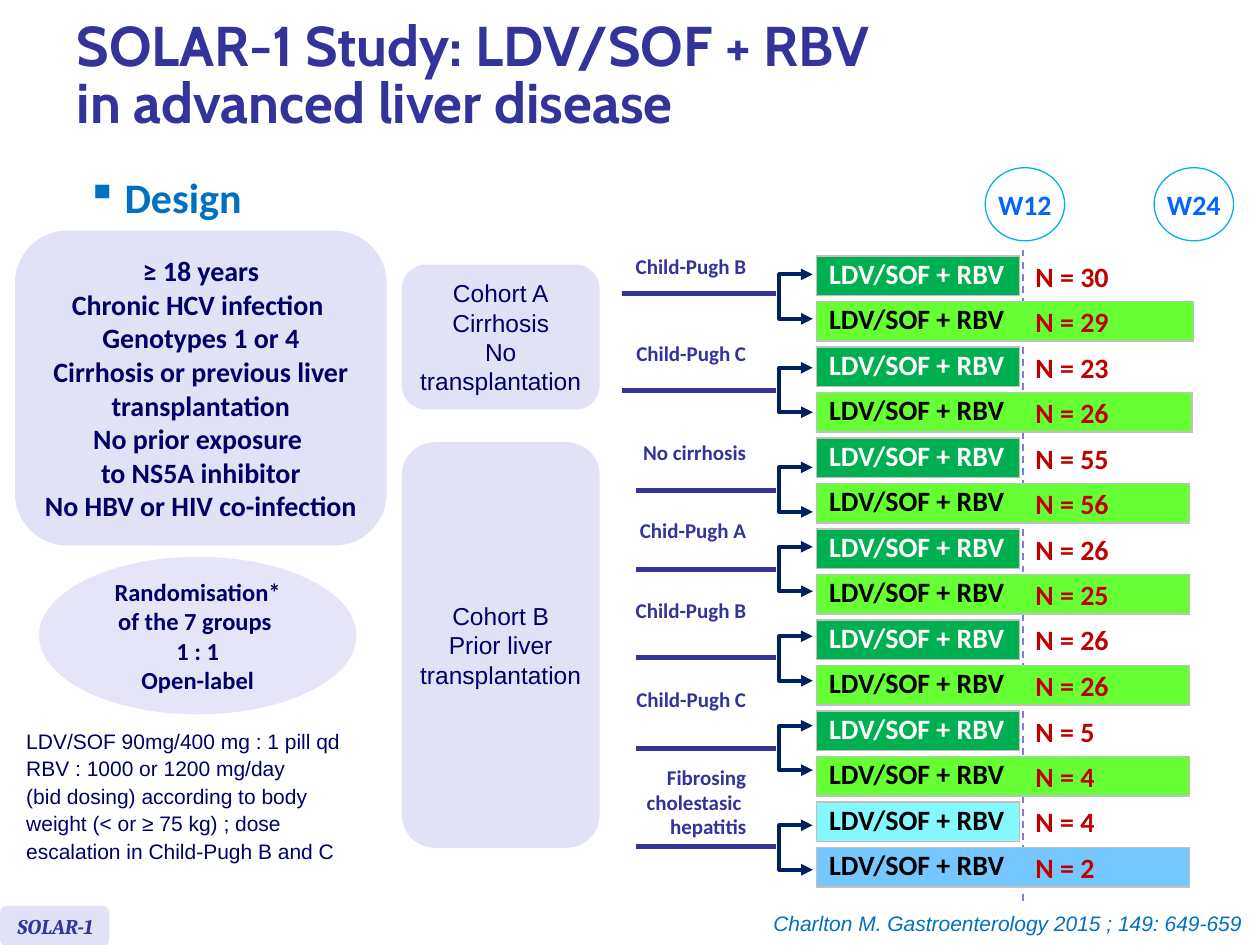
from dataclasses import dataclass

from lxml import etree
from pptx import Presentation
from pptx.dml.color import RGBColor
from pptx.enum.dml import MSO_LINE
from pptx.enum.shapes import MSO_CONNECTOR, MSO_SHAPE
from pptx.enum.text import MSO_ANCHOR, PP_ALIGN
from pptx.oxml.ns import qn
from pptx.util import Pt

LEFT, MID, RIGHT = PP_ALIGN.LEFT, PP_ALIGN.CENTER, PP_ALIGN.RIGHT
TOP, MIDDLE = MSO_ANCHOR.TOP, MSO_ANCHOR.MIDDLE
ROUND, OVAL = MSO_SHAPE.ROUNDED_RECTANGLE, MSO_SHAPE.OVAL
STRAIGHT, ELBOW = MSO_CONNECTOR.STRAIGHT, MSO_CONNECTOR.ELBOW
DASH = MSO_LINE.DASH


@dataclass(frozen=True)
class Theme:
    indigo: str = "333399"
    navy: str = "000066"
    blue: str = "0070C0"
    week: str = "0066FF"
    ring: str = "00B0F0"
    panel: str = "E2E2F6"
    oval: str = "E5E5F7"
    white: str = "FFFFFF"
    black: str = "000000"
    green: str = "00B050"
    lime: str = "66FF33"
    aqua: str = "85F8FF"
    sky: str = "76C7FF"
    edge: str = "C0C0C0"
    count: str = "C00000"
    arrow: str = "002060"
    dash: str = "7E7ED4"
    title: int = 32
    head: int = 24
    large: int = 16
    mid: int = 14
    small: int = 12


T = Theme()
ROW = 26  # pitch of the treatment bars
BAR_X, BAR_Y, BAR_H = 466.6, 146.2, 22.3
SHORT = 116

# label, its top, rule start, rule height, bracket top
GROUPS = [
    (["Child-Pugh B"], 141.1, 355.7, 167.8, 156.8),
    (["Child-Pugh C"], 190.8, 355.7, 223.2, 210.2),
    (["No cirrhosis"], 247.7, 363.6, 280.1, 267.1),
    (["Chid-Pugh A"], 292.3, 363.6, 325.4, 312.5),
    (["Child-Pugh B"], 337.7, 363.6, 375.8, 363.6),
    (["Child-Pugh C"], 388.8, 363.6, 427.7, 414.7),
    (["Fibrosing", "cholestasic ", "hepatitis"], 433.4, 363.6, 483.8, 471.6),
]
# patients on 12 and on 24 weeks, width of the 24-week bar
ARMS = [(30, 29, 215.3), (23, 26, 214.6), (55, 56, 213.1), (26, 25, 213.1),
        (26, 26, 213.1), (5, 4, 213.1), (4, 2, 213.1)]


def rgb(code):
    return RGBColor.from_string(code)


def sub(parent, tag, **attrs):
    return etree.SubElement(parent, qn(tag), attrs)


def write(frame, lines, size=T.small, color=T.indigo, font="Calibri", bold=True,
          italic=False, align=LEFT, anchor=TOP, wrap=True, inset=None,
          space=None, before=0, bullet=None):
    frame.word_wrap = wrap
    frame.vertical_anchor = anchor
    if inset:
        frame.margin_left = frame.margin_right = Pt(inset[0])
        frame.margin_top = frame.margin_bottom = Pt(inset[1])
    for i, line in enumerate(lines):
        para = frame.add_paragraph() if i else frame.paragraphs[0]
        para.text = line
        para.alignment = align
        if bullet:
            mark(para, bullet, color)
        if space:
            para.line_spacing = space
        if i and before:
            para.space_before = Pt(before)
        for run in para.runs:
            face = run.font
            face.name, face.size = font, Pt(size)
            face.bold, face.italic = bold, italic
            face.color.rgb = rgb(color)


def mark(para, char, color):
    """Give the paragraph a hanging bullet."""
    props = para._p.get_or_add_pPr()
    props.set("marL", str(Pt(21.6)))
    props.set("indent", str(-Pt(21.6)))
    sub(sub(props, "a:buClr"), "a:srgbClr", val=color)
    sub(props, "a:buChar", char=char)


def label(slide, box, lines, **fmt):
    frame = slide.shapes.add_textbox(*map(Pt, box)).text_frame
    write(frame, lines, **fmt)


def panel(slide, kind, box, fill, lines=(), line=None, **fmt):
    shape = slide.shapes.add_shape(kind, *map(Pt, box))
    shape.shadow.inherit = False
    shape.fill.solid()
    shape.fill.fore_color.rgb = rgb(fill)
    if line:
        shape.line.color.rgb = rgb(line)
        shape.line.width = Pt(0.75)
    else:
        shape.line.fill.background()
    write(shape.text_frame, lines, align=MID, anchor=MIDDLE, **fmt)


def rule(slide, ends, color, width, kind=STRAIGHT, dash=None):
    link = slide.shapes.add_connector(kind, *map(Pt, ends))
    link.line.color.rgb = rgb(color)
    link.line.width = Pt(width)
    if dash:
        link.line.dash_style = dash
    sub(link._element.spPr, "a:effectLst")
    return link


def fork(slide, top):
    """Draw a bracket, open to the right, with an arrowhead at each end."""
    x, gap, reach = 464.4, 0.12, 20.2
    link = rule(slide, (x, top, x + gap, top + 25.4), T.arrow, 2.25, ELBOW)
    props = link._element.spPr
    guides = props.find(qn("a:prstGeom")).find(qn("a:avLst"))
    bend = round(-reach / gap * 100000)
    sub(guides, "a:gd", name="adj1", fmla=f"val {bend}")
    for tag in ("a:headEnd", "a:tailEnd"):
        sub(props.find(qn("a:ln")), tag, type="triangle")


def bar(slide, top, width, fill, color):
    box = map(Pt, (BAR_X, top, width, BAR_H))
    table = slide.shapes.add_table(1, 1, *box).table
    table.first_row = table.horz_banding = False
    cell = table.cell(0, 0)
    write(cell.text_frame, ["LDV/SOF + RBV"], size=T.large, color=color, space=0.8)
    cell.vertical_anchor = MIDDLE
    props = cell._tc.get_or_add_tcPr()
    for side in ("a:lnL", "a:lnR", "a:lnT", "a:lnB"):
        edge = sub(props, side, w=str(Pt(1)))
        sub(sub(edge, "a:solidFill"), "a:srgbClr", val=T.edge)
    cell.fill.solid()
    cell.fill.fore_color.rgb = rgb(fill)


def arms(slide):
    """Draw the pairs of treatment bars with their patient counts."""
    for i, (first, second, width) in enumerate(ARMS):
        last = i == len(ARMS) - 1
        pair = [(first, SHORT, T.aqua if last else T.green, T.black if last else T.white),
                (second, width, T.sky if last else T.lime, T.black)]
        for j, (count, wide, fill, color) in enumerate(pair):
            shift = ROW * (2 * i + j)
            bar(slide, BAR_Y + shift, wide, fill, color)
            label(slide, (584.6, 144.5 + shift, 57, 26.6), [f"N = {count}"],
                  size=T.large, color=T.count, wrap=False)


def groups(slide):
    for lines, top, start, level, split in GROUPS:
        label(slide, (338, top, 95.5, 21.6), lines, align=RIGHT,
              space=Pt(14.2) if len(lines) > 1 else None)
        rule(slide, (start, level, 443.5, level), T.indigo, 3)
        fork(slide, split)


def design(slide):
    """Fill the left half: patients, randomisation, cohorts and dosing."""
    panel(slide, ROUND, (8.6, 131.8, 212.4, 180), T.panel, [
        "≥ 18 years", "Chronic HCV infection ", "Genotypes 1 or 4",
        "Cirrhosis or previous liver transplantation", "No prior exposure ",
        "to NS5A inhibitor", "No HBV or HIV co-infection",
    ], size=T.large, color=T.navy)
    panel(slide, OVAL, (22.3, 318.2, 181.4, 90), T.oval,
          ["Randomisation*", "of the 7 groups ", "1 : 1", "Open-label"],
          size=T.mid, color=T.navy, wrap=False, inset=(0, 0))
    cohorts = [(151.2, 82.8, ["Cohort A", "Cirrhosis", "No transplantation"]),
               (252.7, 231.8, ["Cohort B", "Prior liver", "transplantation"])]
    for top, height, lines in cohorts:
        panel(slide, ROUND, (229.7, top, 113, height), T.panel, lines, size=T.mid,
              color=T.navy, font="Arial", bold=False, inset=(2.9, 3.6))
    label(slide, (7.9, 412.6, 226.8, 84.2), [
        "LDV/SOF 90mg/400 mg : 1 pill qd", "RBV : 1000 or 1200 mg/day",
        "(bid dosing) according to body", "weight (< or ≥ 75 kg) ; dose",
        "escalation in Child-Pugh B and C",
    ], color=T.navy, font="Arial", bold=False, before=1.3)


def main():
    deck = Presentation()
    deck.slide_width, deck.slide_height = Pt(720), Pt(540)
    slide = deck.slides.add_slide(deck.slide_layouts[6])
    label(slide, (36.7, 5.8, 657.4, 77), ["SOLAR-1 Study: LDV/SOF + RBV \vin advanced liver disease"],
          size=T.title, font="Cabin", anchor=MIDDLE, space=0.85)
    label(slide, (42.5, 94.3, 657.4, 40.3), ["Design"], size=T.head,
          color=T.blue, bullet="▪")
    panel(slide, ROUND, (0, 517.7, 62.6, 23), T.panel)
    label(slide, (2.9, 518.4, 76.3, 21.6), ["SOLAR-1"], font="Cambria", italic=True)
    rule(slide, (584.6, 142.6, 584.6, 517), T.dash, 1, dash=DASH)
    for left, week in ((563, "W12"), (659.5, "W24")):
        panel(slide, OVAL, (left, 95.8, 45.4, 41.8), T.white, [week], line=T.ring,
              size=T.large, color=T.week, wrap=False)
    design(slide)
    arms(slide)
    groups(slide)
    label(slide, (427.7, 517, 289.4, 21.6), ["Charlton M. Gastroenterology 2015 ; 149: 649-659"],
          color=T.blue, font="Arial", bold=False, italic=True, align=RIGHT)
    deck.save("out.pptx")


if __name__ == "__main__":
    main()
